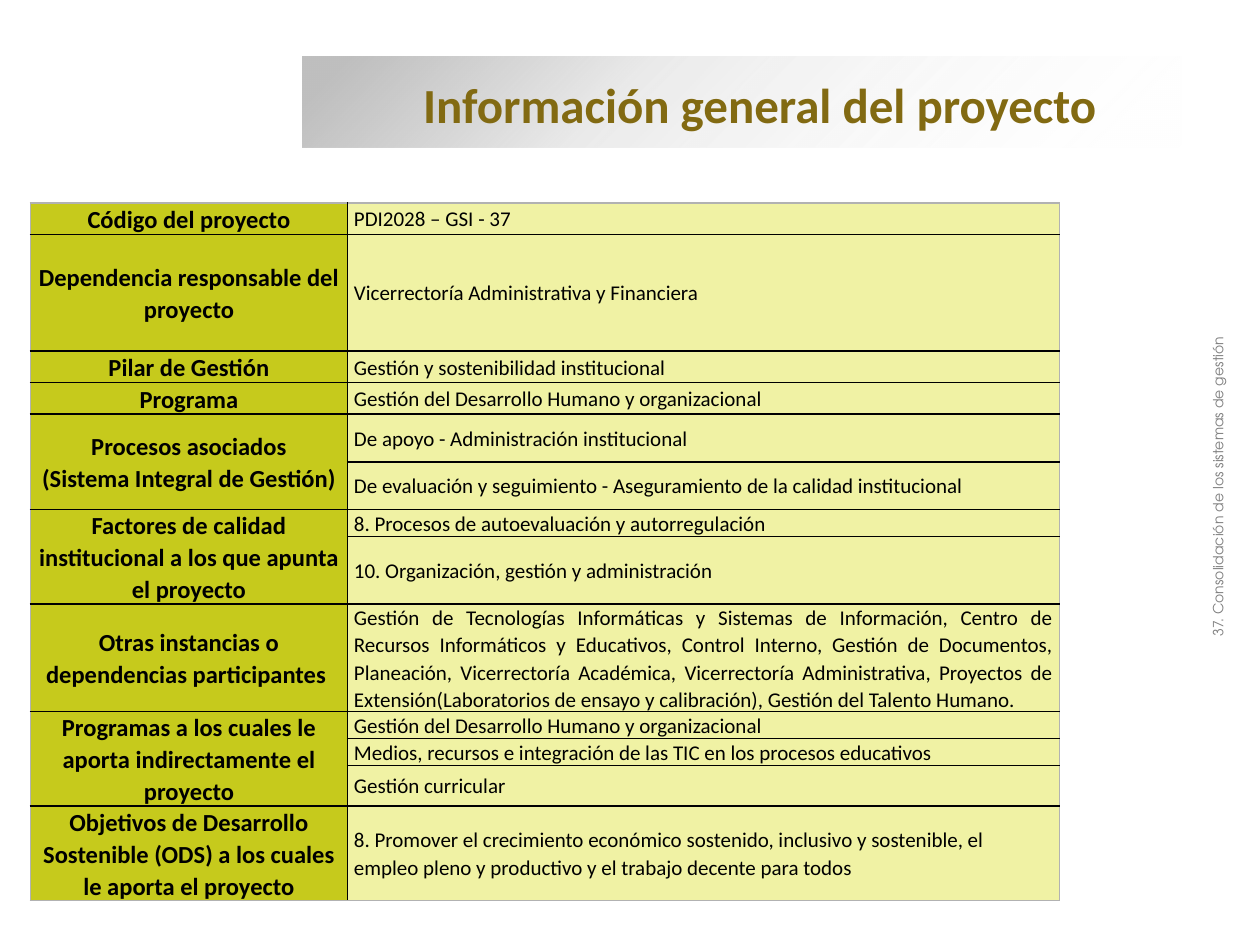
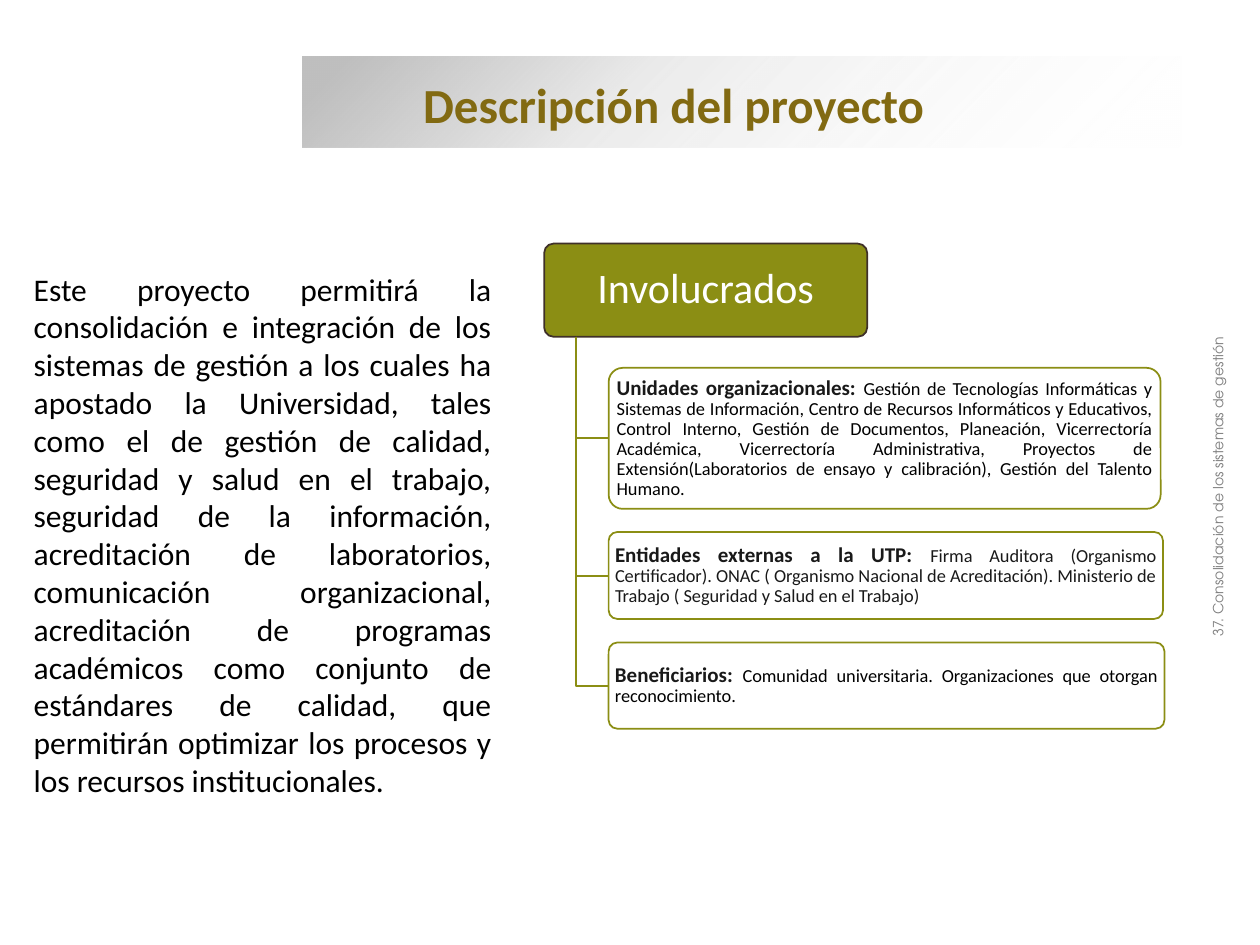
from dataclasses import dataclass
from typing import Any

from lxml import etree
from pptx import Presentation
from pptx import util as u
from pptx.dml.color import RGBColor
from pptx.enum import shapes, text
from pptx.oxml.ns import qn

COLORS = {
    "title": "826A12", "band": "BFBFBF", "white": "FFFFFF", "black": "000000",
    "label": "C6CA1C", "value": "F0F2A4", "frame": "B2B2B2", "footer": "808080",
    "olive": "8B8E14", "brown": "3F3029", "dark": "191919",
}
CENTER, JUSTIFY, LEFT = (
    text.PP_ALIGN.CENTER, text.PP_ALIGN.JUSTIFY, text.PP_ALIGN.LEFT)
MIDDLE = text.MSO_ANCHOR.MIDDLE

FONTS = {
    "title": {"name": "Calibri", "size": u.Pt(28), "bold": True},
    "label": {"name": "Calibri", "size": u.Pt(14), "bold": True},
    "value": {"name": "Calibri", "size": u.Pt(12), "bold": False},
    "body": {"name": "Calibri", "size": u.Pt(18), "bold": False},
    "heading": {"name": "Calibri", "size": u.Pt(24), "bold": False},
    "lead": {"name": "Calibri", "size": u.Pt(12), "bold": True},
    "detail": {"name": "Calibri", "size": u.Pt(10.5), "bold": False},
    "footer": {"name": "TeX Gyre Adventor", "size": u.Pt(8), "bold": False},
}

PARTICIPANTS = (
    "Gestión de Tecnologías Informáticas y Sistemas de Información, Centro de "
    "Recursos Informáticos y Educativos, Control Interno, Gestión de Documentos, "
    "Planeación, Vicerrectoría Académica, Vicerrectoría Administrativa, Proyectos "
    "de Extensión(Laboratorios de ensayo y calibración), Gestión del Talento Humano."
)
DESCRIPTION = (
    "Este proyecto permitirá la consolidación e integración de los sistemas de "
    "gestión a los cuales ha apostado la Universidad, tales como el de gestión de "
    "calidad, seguridad y salud en el trabajo, seguridad de la información, "
    "acreditación de laboratorios, comunicación organizacional, acreditación de "
    "programas académicos como conjunto de estándares de calidad, que permitirán "
    "optimizar los procesos y los recursos institucionales."
)
FOOTER = "37. Consolidación de los sistemas de gestión"


@dataclass
class Run:
    words: str
    font: str
    color: str


@dataclass
class Value:
    words: str
    height: float
    align: Any = LEFT


@dataclass
class Entry:
    label: str
    values: list[Value]


@dataclass
class Card:
    top: float
    width: float
    height: float
    joint: float
    lead: str
    detail: str
    color: str = "black"


ENTRIES = [
    Entry("Código del proyecto", [Value("PDI2028 – GSI - 37", 17.8)]),
    Entry("Dependencia responsable del proyecto",
          [Value("Vicerrectoría Administrativa y Financiera", 66.8)]),
    Entry("Pilar de Gestión", [Value("Gestión y sostenibilidad institucional", 18)]),
    Entry("Programa",
          [Value("Gestión del Desarrollo Humano y organizacional", 18, JUSTIFY)]),
    Entry("Procesos asociados\n(Sistema Integral de Gestión)", [
        Value("De apoyo - Administración institucional", 27.2),
        Value("De evaluación y seguimiento - Aseguramiento de la calidad "
              "institucional", 27.2)]),
    Entry("Factores de calidad institucional a los que apunta el proyecto", [
        Value("8. Procesos de autoevaluación y autorregulación", 15.4),
        Value("10. Organización, gestión y administración", 38.4)]),
    Entry("Otras instancias o dependencias participantes ",
          [Value(PARTICIPANTS, 61.6, JUSTIFY)]),
    Entry("Programas a los cuales le aporta indirectamente el proyecto", [
        Value("Gestión del Desarrollo Humano y organizacional", 15.4),
        Value("Medios, recursos e integración de las TIC en los procesos "
              "educativos", 15.4),
        Value("Gestión curricular", 23.2)]),
    Entry("Objetivos de Desarrollo Sostenible (ODS) a los cuales le aporta el proyecto",
          [Value("8. Promover el crecimiento económico sostenido, inclusivo y "
                 "sostenible, el empleo pleno y productivo y el trabajo decente "
                 "para todos", 53.6)]),
]

CARDS = [
    Card(210.2, 315.4, 80.6, 250.5, "Unidades organizacionales: ", PARTICIPANTS),
    Card(304, 316.8, 49.7, 329, "Entidades externas a la UTP: ",
         "Firma Auditora (Organismo Certificador). ONAC ( Organismo Nacional de "
         "Acreditación). Ministerio de Trabajo ( Seguridad y Salud en el Trabajo)",
         "dark"),
    Card(367.2, 317.6, 49.2, 392, "Beneficiarios: ",
         "Comunidad universitaria. Organizaciones que otorgan reconocimiento."),
]


def rgb(name: str) -> RGBColor:
    return RGBColor.from_string(COLORS[name])


def add_color(parent: Any, name: str, alpha: int = 100) -> None:
    clr = etree.SubElement(parent, qn("a:srgbClr"), val=COLORS[name])
    if alpha < 100:
        etree.SubElement(clr, qn("a:alpha"), val=str(alpha * 1000))


def write(tf: Any, runs: list[Run], align: Any = LEFT, spacing: float = 1) -> None:
    p = tf.paragraphs[0]
    p.alignment, p.line_spacing = align, spacing
    for run in runs:
        for i, line in enumerate(run.words.split("\n")):
            if i:
                p.add_line_break()
            r = p.add_run()
            r.text = line
            for key, value in FONTS[run.font].items():
                setattr(r.font, key, value)
            r.font.color.rgb = rgb(run.color)


def set_margins(target: Any, x: float, y: float) -> None:
    for side, size in {"left": x, "right": x, "top": y, "bottom": y}.items():
        setattr(target, f"margin_{side}", u.Pt(size))


def add_text(s: Any, box: tuple, run: Run, align: Any = LEFT,
             anchor: Any = text.MSO_ANCHOR.TOP) -> Any:
    sp = s.shapes.add_textbox(*map(u.Pt, box))
    sp.text_frame.word_wrap = True
    sp.text_frame.vertical_anchor = anchor
    write(sp.text_frame, [run], align)
    return sp


def add_box(s: Any, box: tuple, fill: str, line: str, alpha: int = 100) -> Any:
    sp = s.shapes.add_shape(shapes.MSO_SHAPE.ROUNDED_RECTANGLE, *map(u.Pt, box))
    sp.shadow.inherit = False
    sp.adjustments[0] = 0.1
    sp.fill.solid()
    sp.fill.fore_color.rgb = rgb(fill)
    if alpha < 100:
        solid = sp._element.spPr.find(qn("a:solidFill"))
        solid.clear()
        add_color(solid, fill, alpha)
    sp.line.color.rgb = rgb(line)
    sp.line.width = u.Pt(1)
    sp.text_frame.word_wrap = True
    sp.text_frame.vertical_anchor = MIDDLE
    return sp


def add_band(s: Any) -> None:
    """Grey band behind the title, fading out to the right."""
    sp = s.shapes.add_shape(
        shapes.MSO_SHAPE.RECTANGLE, *map(u.Pt, (172.8, 32.4, 502.6, 51.8)))
    sp.shadow.inherit = False
    sp.line.fill.background()
    sp.fill.gradient()
    grad = sp._element.spPr.find(qn("a:gradFill"))
    grad.find(qn("a:lin")).set("ang", str(45 * 60000))
    stops = grad.find(qn("a:gsLst"))
    stops.clear()
    for pos, color, alpha in ((5, "band", 100), (37, "band", 31), (100, "white", 0)):
        add_color(etree.SubElement(stops, qn("a:gs"), pos=str(pos * 1000)),
                  color, alpha)


def add_slide(prs: Any, title: str) -> Any:
    s = prs.slides.add_slide(prs.slide_layouts[6])
    add_band(s)
    add_text(s, (234.7, 38.9, 446.4, 41), Run(title, "title", "title"), anchor=MIDDLE)
    footer = add_text(s, (522, 269.3, 348.5, 17.3),
                      Run(FOOTER, "footer", "footer"), CENTER)
    footer.rotation = 270
    return s


def set_borders(cell: Any, outer: dict[str, bool]) -> None:
    tc_pr = cell._tc.get_or_add_tcPr()
    for i, (side, is_outer) in enumerate(outer.items()):
        ln = etree.Element(qn(f"a:ln{side}"), w=str(u.Pt(1)))
        add_color(etree.SubElement(ln, qn("a:solidFill")),
                  "frame" if is_outer else "black")
        tc_pr.insert(i, ln)


def fill_cell(cell: Any, run: Run, fill: str, align: Any, margin: float) -> None:
    cell.vertical_anchor = MIDDLE
    set_margins(cell, margin, 0)
    cell.fill.solid()
    cell.fill.fore_color.rgb = rgb(fill)
    if run.words:
        write(cell.text_frame, [run], align, 1.07)


def add_info_table(s: Any) -> None:
    values = [v for e in ENTRIES for v in e.values]
    widths = (181.4, 406.8)
    box = (17.3, 115.9, sum(widths), sum(v.height for v in values))
    tbl = s.shapes.add_table(len(values), 2, *map(u.Pt, box)).table
    tbl.first_row = tbl.horz_banding = False
    for col, width in zip(tbl.columns, widths):
        col.width = u.Pt(width)
    row = 0
    for entry in ENTRIES:
        first = row
        for v in entry.values:
            tbl.rows[row].height = u.Pt(v.height)
            label = entry.label if row == first else ""
            fill_cell(tbl.cell(row, 0), Run(label, "label", "black"),
                      "label", CENTER, 2.9)
            fill_cell(tbl.cell(row, 1), Run(v.words, "value", "black"),
                      "value", v.align, 3.6)
            for col in (0, 1):
                set_borders(tbl.cell(row, col), {
                    "L": col == 0, "R": col == 1,
                    "T": row == 0, "B": row == len(values) - 1})
            row += 1
        if row - first > 1:
            tbl.cell(first, 0).merge(tbl.cell(row - 1, 0))


def add_branch(s: Any, joint: float) -> None:
    """Elbow line from the heading down to one card."""
    x, top, right = 329, 192.4, 347.8
    builder = s.shapes.build_freeform(u.Pt(x), u.Pt(top))
    builder.add_line_segments(
        [(u.Pt(x), u.Pt(joint)), (u.Pt(right), u.Pt(joint))], close=False)
    sp = builder.convert_to_shape()
    sp.shadow.inherit = False
    sp.fill.background()
    sp.line.color.rgb = rgb("olive")
    sp.line.width = u.Pt(1)


def add_stakeholders(s: Any) -> None:
    head = add_box(s, (311, 139.2, 184.6, 53.2), "olive", "brown")
    set_margins(head.text_frame, 3.6, 2.2)
    write(head.text_frame, [Run("Involucrados", "heading", "white")], CENTER, 0.9)
    for card in CARDS:
        add_branch(s, card.joint)
        sp = add_box(s, (347.8, card.top, card.width, card.height),
                     "white", "olive", 90)
        set_margins(sp.text_frame, 2.2, 1.4)
        write(sp.text_frame, [Run(card.lead, "lead", "dark"),
                              Run(card.detail, "detail", card.color)], JUSTIFY, 0.9)


def main() -> None:
    prs = Presentation()
    prs.slide_width, prs.slide_height = u.Pt(720), u.Pt(540)
    add_info_table(add_slide(prs, "Información general del proyecto"))
    s = add_slide(prs, "Descripción del proyecto")
    add_stakeholders(s)
    add_text(s, (12.2, 150.5, 275.8, 328.3), Run(DESCRIPTION, "body", "black"), JUSTIFY)
    prs.save("out.pptx")


if __name__ == "__main__":
    main()
